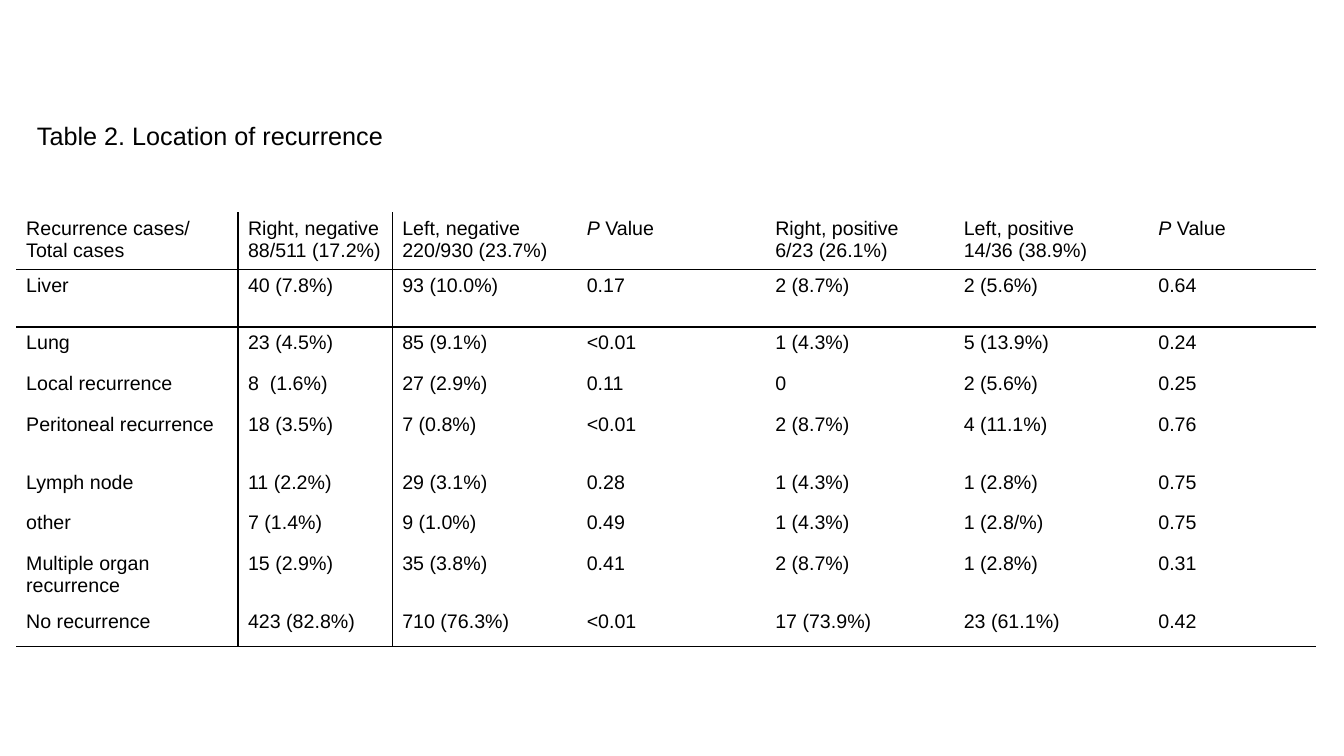
from dataclasses import dataclass

from lxml import etree
from pptx import Presentation
from pptx.dml.color import RGBColor
from pptx.enum.text import MSO_ANCHOR, MSO_AUTO_SIZE, PP_ALIGN
from pptx.oxml.ns import qn
from pptx.util import Inches, Pt

LEFT = PP_ALIGN.LEFT
TOP = MSO_ANCHOR.TOP
NO_AUTOFIT = MSO_AUTO_SIZE.NONE
TITLE_ONLY_LAYOUT = 5


@dataclass(frozen=True)
class Theme:
    font: str = "Arial"
    ink: str = "000000"
    title_size: float = 18
    table_size: float = 14
    rule_width: float = 1


THEME = Theme()
SLIDE_WIDTH = Inches(13.33)
SLIDE_HEIGHT = Inches(7.5)
TITLE_AREA = (0.02, 0.157, 0.354, 0.055)
TABLE_AREA = (0.012, 0.281, 0.967, 0.574)
COLUMN_SHARES = [2.2, 1.53, 1.83, 1.87, 1.87, 1.93, 1.66]
SHORT_ROW, TALL_ROW = 5, 7
TALL_ROWS = {0, 1, 4, 7}
RULED_ROWS = {0, 1, 8}
RULED_COLUMNS = {0, 1}
P_VALUE = "P Value"

RECURRENCE_ROWS = [
    ["Recurrence cases/\nTotal cases", "Right, negative\n88/511 (17.2%)",
     "Left, negative\n220/930 (23.7%)", P_VALUE, "Right, positive\n6/23 (26.1%)",
     "Left, positive\n14/36 (38.9%)", P_VALUE],
    ["Liver", "40 (7.8%)", "93 (10.0%)", "0.17", "2 (8.7%)", "2 (5.6%)", "0.64"],
    ["Lung", "23 (4.5%)", "85 (9.1%)", "<0.01", "1 (4.3%)", "5 (13.9%)", "0.24"],
    ["Local recurrence", "8  (1.6%)", "27 (2.9%)", "0.11", "0", "2 (5.6%)", "0.25"],
    ["Peritoneal recurrence", "18 (3.5%)", "7 (0.8%)", "<0.01", "2 (8.7%)", "4 (11.1%)", "0.76"],
    ["Lymph node", "11 (2.2%)", "29 (3.1%)", "0.28", "1 (4.3%)", "1 (2.8%)", "0.75"],
    ["other", "7 (1.4%)", "9 (1.0%)", "0.49", "1 (4.3%)", "1 (2.8/%)", "0.75"],
    ["Multiple organ recurrence", "15 (2.9%)", "35 (3.8%)", "0.41", "2 (8.7%)", "1 (2.8%)", "0.31"],
    ["No recurrence", "423 (82.8%)", "710 (76.3%)", "<0.01", "17 (73.9%)", "23 (61.1%)", "0.42"],
]


def place(area):
    left, top, width, height = area
    return (int(left * SLIDE_WIDTH), int(top * SLIDE_HEIGHT),
            int(width * SLIDE_WIDTH), int(height * SLIDE_HEIGHT))


def format_runs(text_frame, size):
    for paragraph in text_frame.paragraphs:
        for run in paragraph.runs:
            run.font.name = THEME.font
            run.font.size = Pt(size)
            run.font.color.rgb = RGBColor.from_string(THEME.ink)


def add_title(slide, text):
    title = slide.shapes.title
    title.left, title.top, title.width, title.height = place(TITLE_AREA)
    text_frame = title.text_frame
    text_frame.text = text
    text_frame.auto_size = NO_AUTOFIT
    text_frame.vertical_anchor = TOP
    paragraph = text_frame.paragraphs[0]
    paragraph.alignment = LEFT
    paragraph.line_spacing = 0.9
    format_runs(text_frame, THEME.title_size)


def set_borders(cell, row, column):
    ruled = {
        "a:lnL": column - 1 in RULED_COLUMNS,
        "a:lnR": column in RULED_COLUMNS,
        "a:lnT": row - 1 in RULED_ROWS,
        "a:lnB": row in RULED_ROWS,
    }
    properties = cell._tc.get_or_add_tcPr()
    for position, (tag, visible) in enumerate(ruled.items()):
        line = etree.Element(qn(tag), w=str(Pt(THEME.rule_width)))
        if visible:
            fill = etree.SubElement(line, qn("a:solidFill"))
            etree.SubElement(fill, qn("a:srgbClr"), val=THEME.ink)
        else:
            etree.SubElement(line, qn("a:noFill"))
        properties.insert(position, line)


def fill_cell(cell, text):
    text_frame = cell.text_frame
    if text == P_VALUE:
        paragraph = text_frame.paragraphs[0]
        paragraph.text = text[0]
        paragraph.runs[0].font.italic = True
        paragraph.add_run().text = text[1:]
    else:
        text_frame.text = text
    format_runs(text_frame, THEME.table_size)
    cell.fill.background()


def add_recurrence_table(slide):
    area = place(TABLE_AREA)
    table = slide.shapes.add_table(len(RECURRENCE_ROWS), len(COLUMN_SHARES), *area).table
    table.first_row = False
    table.horz_banding = False
    for column, share in zip(table.columns, COLUMN_SHARES):
        column.width = int(area[2] * share / sum(COLUMN_SHARES))
    row_shares = [TALL_ROW if index in TALL_ROWS else SHORT_ROW
                  for index in range(len(RECURRENCE_ROWS))]
    for row, share in zip(table.rows, row_shares):
        row.height = int(area[3] * share / sum(row_shares))
    for row, texts in enumerate(RECURRENCE_ROWS):
        for column, text in enumerate(texts):
            cell = table.cell(row, column)
            fill_cell(cell, text)
            set_borders(cell, row, column)


def main():
    presentation = Presentation()
    presentation.slide_width = SLIDE_WIDTH
    presentation.slide_height = SLIDE_HEIGHT
    slide = presentation.slides.add_slide(presentation.slide_layouts[TITLE_ONLY_LAYOUT])
    add_title(slide, "Table 2. Location of recurrence")
    add_recurrence_table(slide)
    presentation.save("out.pptx")


if __name__ == "__main__":
    main()
